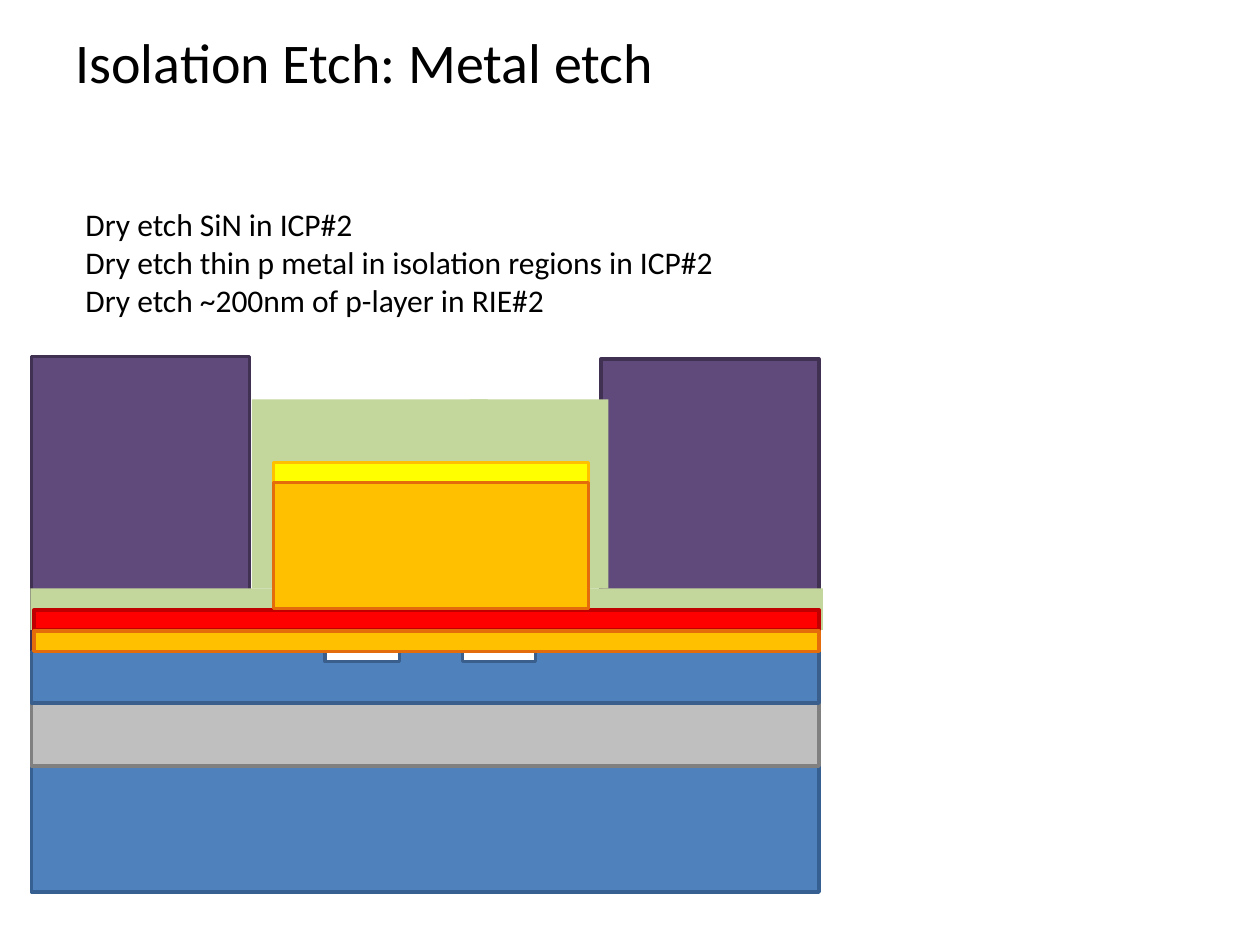
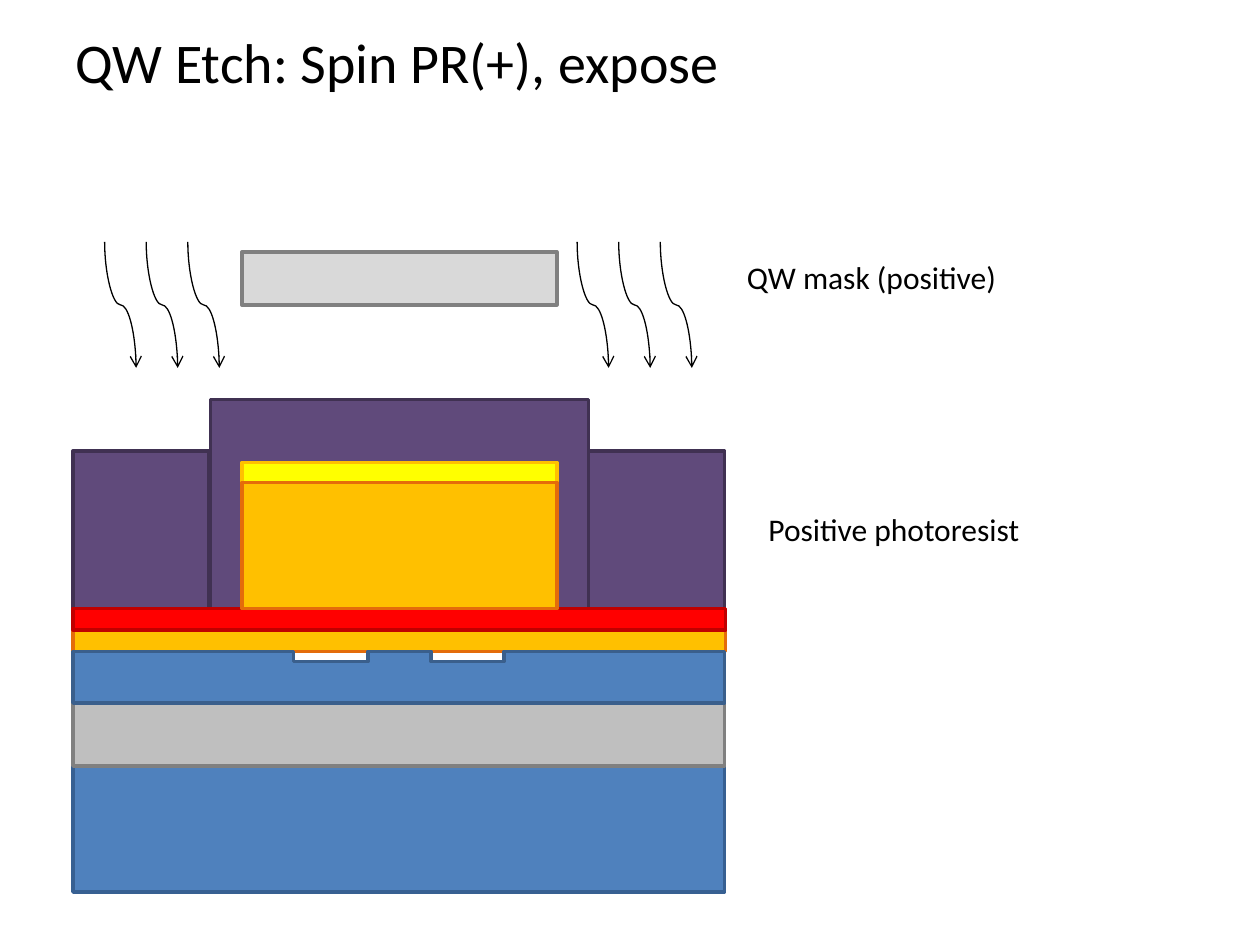
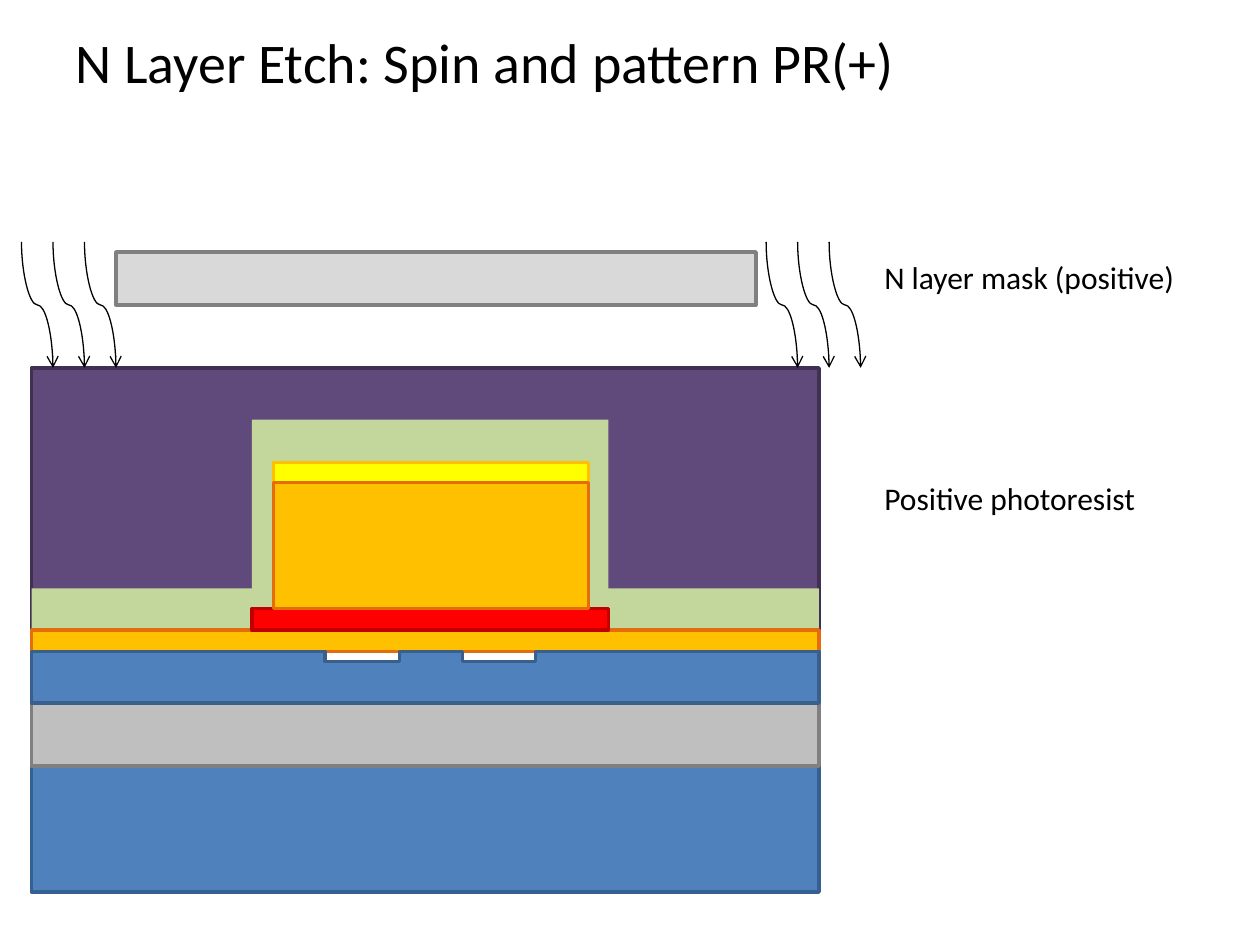
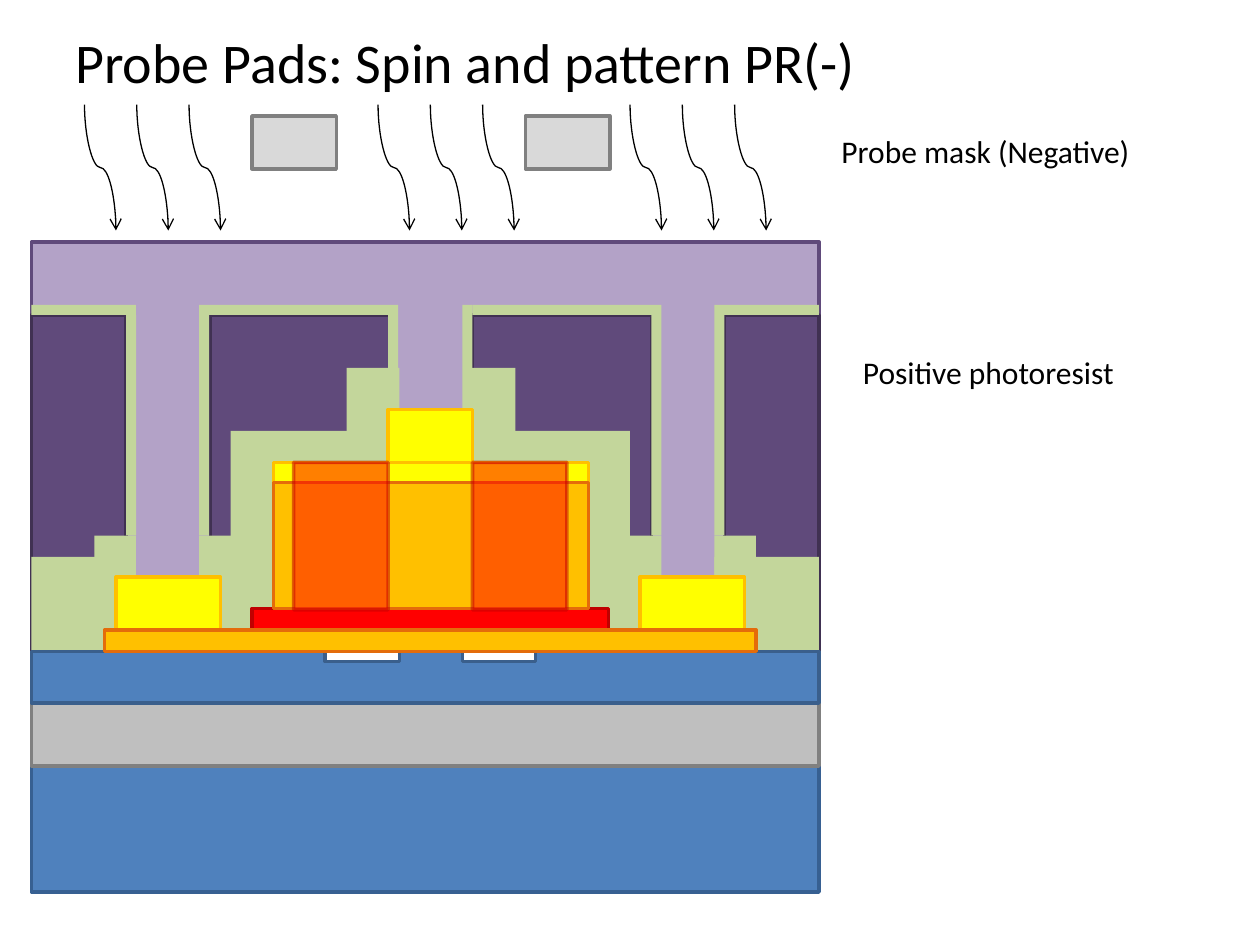
import typing

import pptx
import pptx.dml.color
import pptx.enum.shapes
import pptx.enum.text
import pptx.oxml
import pptx.oxml.ns
import pptx.slide
import pptx.util

RGBColor = pptx.dml.color.RGBColor
Inches = pptx.util.Inches
Pt = pptx.util.Pt
qn = pptx.oxml.ns.qn

# Colours
BLACK = RGBColor(0x00, 0x00, 0x00)
BLUE = RGBColor(0x4F, 0x81, 0xBD)
NAVY = RGBColor(0x37, 0x60, 0x92)
STEEL = RGBColor(0x3A, 0x5F, 0x8C)
GREY = RGBColor(0xBF, 0xBF, 0xBF)
PALE = RGBColor(0xD9, 0xD9, 0xD9)
SLATE = RGBColor(0x80, 0x80, 0x80)
GOLD = RGBColor(0xFF, 0xC0, 0x00)
RUST = RGBColor(0xE4, 0x6C, 0x0A)
YELLOW = RGBColor(0xFF, 0xFF, 0x00)
RED = RGBColor(0xFF, 0x00, 0x00)
WINE = RGBColor(0xC0, 0x00, 0x00)
GREEN = RGBColor(0xC3, 0xD6, 0x9B)
PURPLE = RGBColor(0x60, 0x4A, 0x7B)
PLUM = RGBColor(0x40, 0x31, 0x52)
LILAC = RGBColor(0xB3, 0xA2, 0xC7)

FONT = "Calibri"
EDGE = Pt(2)


class Look(typing.NamedTuple):
    fill: RGBColor
    line: typing.Optional[RGBColor] = None
    alpha: int = 100


class Layer(typing.NamedTuple):
    look: Look
    left: float
    top: float
    width: float
    height: float


# Materials
WAFER = Look(BLUE, NAVY)
OXIDE = Look(GREY, SLATE)
GUIDE = Look(BLUE, STEEL)
CLAD = Look(GOLD, RUST)
METAL = Look(YELLOW, GOLD)
WELL = Look(RED, WINE)
IMPLANT = Look(RED, WINE, 50)
SIN = Look(GREEN)
RESIST = Look(PURPLE, PLUM)
NEGATIVE = Look(LILAC, PURPLE)
MASK = Look(PALE, SLATE)


def paint(shape, look: Look) -> None:
    shape.shadow.inherit = False
    shape.fill.solid()
    shape.fill.fore_color.rgb = look.fill
    if look.line is None:
        shape.line.fill.background()
    else:
        shape.line.color.rgb = look.line
        shape.line.width = EDGE
    if look.alpha < 100:
        for color in list(shape._element.spPr.iter(qn("a:srgbClr"))):
            alpha = pptx.oxml.parse_xml(
                f'<a:alpha {pptx.oxml.ns.nsdecls("a")} val="{look.alpha * 1000}"/>')
            color.append(alpha)


def draw(slide: pptx.slide.Slide, *layers: Layer) -> None:
    for layer in layers:
        box = slide.shapes.add_shape(
            pptx.enum.shapes.MSO_SHAPE.RECTANGLE, *map(Inches, layer[1:]))
        paint(box, layer.look)


def write(slide: pptx.slide.Slide, text: str, left: float, top: float,
          width: float, height: float = 0.4, size: int = 18,
          wrap: bool = False) -> None:
    box = slide.shapes.add_textbox(*map(Inches, (left, top, width, height)))
    frame = box.text_frame
    frame.text = text
    frame.word_wrap = wrap
    frame.auto_size = pptx.enum.text.MSO_AUTO_SIZE.SHAPE_TO_FIT_TEXT
    for para in frame.paragraphs:
        for run in para.runs:
            run.font.name = FONT
            run.font.size = Pt(size)
            run.font.color.rgb = BLACK


def start(deck, title: str) -> pptx.slide.Slide:
    slide = deck.slides.add_slide(deck.slide_layouts[6])
    write(slide, title, 0.5, 0.17, 7.25, 0.64, size=32, wrap=True)
    return slide


def rays(slide: pptx.slide.Slide, left: float, top: float, step: float) -> None:
    """Three wavy light arrows, each 0.25 wide and 1 high."""
    for i in range(3):
        # A level curve, turned upright about its centre
        mid = left + i * step + 0.125
        ray = slide.shapes.add_connector(
            pptx.enum.shapes.MSO_CONNECTOR.CURVE,
            Inches(mid + 0.5), Inches(top + 0.375),
            Inches(mid - 0.5), Inches(top + 0.625))
        ray.line.color.rgb = BLACK
        ray.line.width = Pt(0.75)
        props = ray._element.spPr
        props.find(qn("a:xfrm")).set("rot", "16200000")
        tail = pptx.oxml.parse_xml(
            f'<a:tailEnd {pptx.oxml.ns.nsdecls("a")} type="arrow"/>')
        props.find(qn("a:ln")).append(tail)
        props.append(pptx.oxml.parse_xml(
            f'<a:effectLst {pptx.oxml.ns.nsdecls("a")}/>'))


def base(slide: pptx.slide.Slide, left: float = 0.25, width: float = 6.25,
         mid: float = 3.42) -> None:
    """Wafer, oxide and the guide layer with two slots beside the middle."""
    draw(slide,
         Layer(WAFER, left, 6.08, width, 1),
         Layer(OXIDE, left, 5.58, width, 0.5))
    right, top, floor, foot = left + width, 5.17, 5.25, 5.58
    points = []
    for near, far in ((mid - 0.84, mid - 0.25), (mid + 0.25, mid + 0.83)):
        points += [(near, top), (near, floor), (far, floor), (far, top)]
    points += [(right, top), (right, foot), (left, foot)]
    form = slide.shapes.build_freeform(Inches(left), Inches(top))
    form.add_line_segments([(Inches(x), Inches(y)) for x, y in points])
    paint(form.convert_to_shape(), GUIDE)


def ridge(slide: pptx.slide.Slide, well: Layer, mid: float = 3.42) -> None:
    """Metal cap, quantum well and cladding of the laser ridge."""
    left = mid - 1.25
    draw(slide,
         Layer(METAL, left, 3.67, 2.5, 0.17),
         well,
         Layer(CLAD, left, 3.83, 2.5, 1))


def metal_etch(deck) -> None:
    slide = start(deck, "Isolation Etch: Metal etch")
    write(slide, "Dry etch SiN in ICP#2\n"
          "Dry etch thin p metal in isolation regions in ICP#2\n"
          "Dry etch ~200nm of p-layer in RIE#2", 0.58, 1.58, 5.25, 1.01)
    draw(slide,
         Layer(RESIST, 4.77, 2.85, 1.73, 2.33),
         Layer(RESIST, 0.25, 2.83, 1.73, 2.33),
         Layer(SIN, 0.24, 4.67, 6.29, 0.33),
         Layer(SIN, 3.73, 3.17, 1.1, 1.5),
         Layer(SIN, 2, 3.17, 1.87, 1.5))
    ridge(slide, Layer(WELL, 0.27, 4.84, 6.23, 0.16))
    base(slide)
    draw(slide, Layer(CLAD, 0.27, 5.01, 6.23, 0.16))


def well_etch(deck) -> None:
    slide = start(deck, "QW Etch: Spin PR(+), expose")
    mid = 3.17
    draw(slide,
         Layer(RESIST, 4.67, 3.58, 1.08, 1.25),
         Layer(RESIST, 0.58, 3.58, 1.08, 1.25),
         Layer(RESIST, 1.67, 3.17, 3, 1.67),
         Layer(MASK, 1.92, 2, 2.5, 0.42),
         Layer(CLAD, 0.58, 5, 5.18, 0.17))
    for left in (0.83, 4.58):
        rays(slide, left, 1.92, 0.33)
    ridge(slide, Layer(WELL, 0.58, 4.83, 5.18, 0.17), mid)
    base(slide, 0.58, 5.17, mid)
    write(slide, "QW mask (positive)", 5.83, 2, 2.2)
    write(slide, "Positive photoresist", 6, 4, 2.21)


def layer_etch(deck) -> None:
    slide = start(deck, "N Layer Etch: Spin and pattern PR(+)")
    draw(slide,
         Layer(RESIST, 0.25, 2.92, 6.25, 2.08),
         Layer(SIN, 0.25, 4.67, 6.25, 0.33),
         Layer(SIN, 2, 3.33, 2.83, 1.5),
         Layer(CLAD, 0.25, 5, 6.25, 0.17))
    ridge(slide, Layer(WELL, 2, 4.83, 2.83, 0.17))
    base(slide)
    for left in (0.17, 6.08):
        rays(slide, left, 1.92, 0.25)
    draw(slide, Layer(MASK, 0.92, 2, 5.08, 0.42))
    write(slide, "N layer mask (positive)", 6.92, 2, 2.53)
    write(slide, "Positive photoresist", 6.92, 3.75, 2.21)


def probe_pads(deck) -> None:
    slide = start(deck, "Probe Pads: Spin and pattern PR(-)")
    # Resist blocks, then nitride steps around the pads and the ridge
    draw(slide, Layer(NEGATIVE, 0.25, 1.92, 6.25, 2.67))
    blocks = ((0.25, 0.75), (1.67, 1.42), (3.75, 1.42), (5.75, 0.75))
    draw(slide, *(Layer(RESIST, x, 2.5, w, 2.67) for x, w in blocks))
    draw(slide, *(Layer(SIN, x, 2.92, 0.42, 0.75) for x in (2.75, 3.67)))
    draw(slide, *(Layer(SIN, x, 4.25, 0.33, 0.92)
                  for x in (0.75, 1.58, 4.92, 5.67)))
    draw(slide, *(Layer(SIN, x, 4.42, 0.83, 0.75) for x in (0.25, 5.67)))
    draw(slide, Layer(SIN, 1.83, 3.42, 3.17, 1.58))
    ridge(slide, Layer(WELL, 2, 4.83, 2.83, 0.17))
    base(slide)

    # Contact pads and implanted sides
    draw(slide,
         Layer(METAL, 0.92, 4.58, 0.83, 0.42),
         Layer(METAL, 3.08, 3.25, 0.67, 0.42),
         Layer(METAL, 5.08, 4.58, 0.83, 0.42))
    draw(slide, *(Layer(IMPLANT, x, 3.67, 0.75, 1.17) for x in (2.33, 3.75)))
    draw(slide, Layer(CLAD, 0.83, 5, 5.17, 0.17))

    # Nitride lining of the openings
    draw(slide, *(Layer(SIN, x, 2.5, 0.08, 1.75)
                  for x in (1, 1.58, 5.17, 5.67)))
    lids = ((0.25, 0.83), (1.58, 1.5), (3.75, 1.5), (5.67, 0.83))
    draw(slide, *(Layer(SIN, x, 2.42, w, 0.08) for x, w in lids))
    draw(slide, *(Layer(SIN, x, 2.42, 0.08, 0.5) for x in (3.08, 3.67)))

    # Exposure
    for left in (0.67, 3, 5):
        rays(slide, left, 0.83, 0.415)
    draw(slide, *(Layer(MASK, x, 0.92, 0.67, 0.42) for x in (2, 4.17)))
    write(slide, "Probe mask (Negative)", 6.58, 1, 2.51)
    write(slide, "Positive photoresist", 6.75, 2.75, 2.21)


def main() -> None:
    deck = pptx.Presentation()
    deck.slide_width = Inches(10)
    deck.slide_height = Inches(7.5)
    for build in (metal_etch, well_etch, layer_etch, probe_pads):
        build(deck)
    deck.save("out.pptx")


if __name__ == "__main__":
    main()
